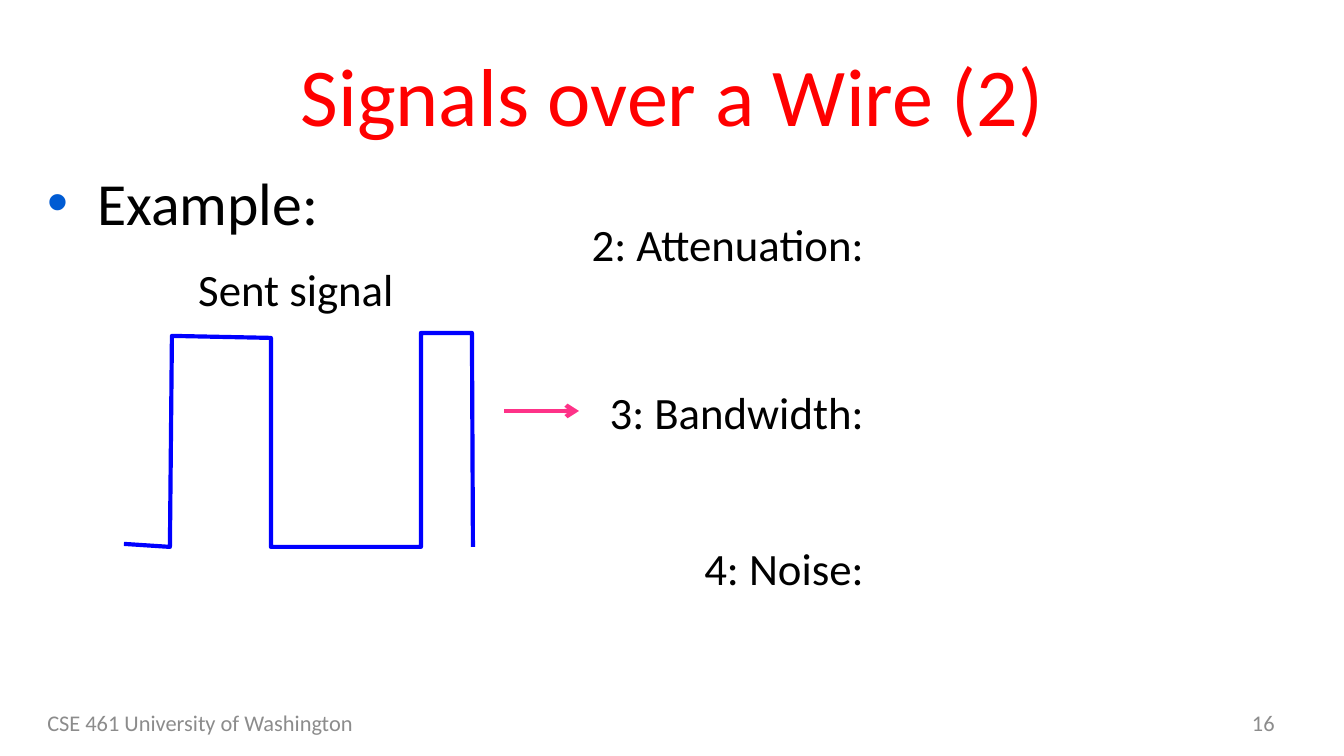
from lxml import etree
from pptx import Presentation
from pptx import util as u
from pptx.dml.color import RGBColor
from pptx.enum import shapes, text
from pptx.oxml import parse_xml
from pptx.oxml.ns import nsdecls, qn

SCALE = 914400 / 134.4
FONT = "Calibri"
RED = RGBColor(0xFF, 0x00, 0x00)
BLACK = RGBColor(0x00, 0x00, 0x00)
GRAY = RGBColor(0x8C, 0x8C, 0x8C)
BLUE = RGBColor(0x00, 0x00, 0xFF)
PINK = RGBColor(0xFE, 0x32, 0x88)
BULLET_BLUE = RGBColor(0x00, 0x5B, 0xD3)

LEFT, CENTER, RIGHT = text.PP_ALIGN.LEFT, text.PP_ALIGN.CENTER, text.PP_ALIGN.RIGHT
TOP, MIDDLE = text.MSO_ANCHOR.TOP, text.MSO_ANCHOR.MIDDLE

TITLE = "Signals over a Wire (2)"
TITLE_BOX = (34, 31, 1277, 126)
BULLET = "Example:"
BULLET_BOX = (34, 159, 1277, 499)
BULLET_INDENT = 50
EFFECTS = [("2: Attenuation:", 210), ("3: Bandwidth:", 378), ("4: Noise:", 534)]
EFFECT_LEFT, EFFECT_WIDTH, LABEL_HEIGHT = 565, 312, 67
SENT_LABEL = ("Sent signal", (185, 255, 230, LABEL_HEIGHT))
FOOTERS = [
    ("CSE 461 University of Washington", (34, 703, 426, 40), LEFT),
    ("16", (974, 703, 314, 40), RIGHT),
]
SIGNAL = [(124, 544), (170, 547), (172, 336), (271, 338), (271, 547),
          (421, 547), (421, 333), (472, 333), (473, 547)]
ARROW = (504, 411, 579, 411)


def px(*values):
    return [u.Emu(round(value * SCALE)) for value in values]


def write(shape, words, size, color, align=LEFT, anchor=TOP):
    frame = shape.text_frame
    frame.word_wrap = True
    frame.auto_size = text.MSO_AUTO_SIZE.NONE
    frame.vertical_anchor = anchor
    paragraph = frame.paragraphs[0]
    paragraph.text = words
    paragraph.alignment = align
    paragraph.font.name = FONT
    paragraph.font.size = u.Pt(size)
    paragraph.font.color.rgb = color
    return paragraph


def add_text(slide, words, box, *style):
    return write(slide.shapes.add_textbox(*px(*box)), words, *style)


def add_bullet(paragraph):
    properties = paragraph._p.get_or_add_pPr()
    indent = px(BULLET_INDENT)[0]
    properties.set("marL", str(indent))
    properties.set("indent", str(-indent))
    parts = [
        '<a:spcBef {}><a:spcPct val="20000"/></a:spcBef>',
        '<a:buClr {}><a:srgbClr val="' + str(BULLET_BLUE) + '"/></a:buClr>',
        '<a:buFont {} typeface="Arial"/>',
        '<a:buChar {} char="•"/>',
    ]
    for position, part in enumerate(parts):
        properties.insert(position, parse_xml(part.format(nsdecls("a"))))


def add_signal(slide):
    points = [px(*point) for point in SIGNAL]
    builder = slide.shapes.build_freeform(*points[0])
    builder.add_line_segments(points[1:], close=False)
    signal = builder.convert_to_shape()
    signal.shadow.inherit = False
    signal.fill.background()
    signal.line.color.rgb = BLUE
    signal.line.width = u.Pt(2.25)


def add_arrow(slide):
    arrow = slide.shapes.add_connector(shapes.MSO_CONNECTOR.STRAIGHT, *px(*ARROW))
    arrow.line.color.rgb = PINK
    arrow.line.width = u.Pt(2.25)
    properties = arrow._element.spPr
    etree.SubElement(properties.find(qn("a:ln")), qn("a:tailEnd"), type="arrow")
    etree.SubElement(properties, qn("a:effectLst"))


def main():
    presentation = Presentation()
    presentation.slide_width, presentation.slide_height = px(1344, 756)
    slide = presentation.slides.add_slide(presentation.slide_layouts[5])

    title = slide.shapes.title
    title.left, title.top, title.width, title.height = px(*TITLE_BOX)
    write(title, TITLE, 44, RED, CENTER, MIDDLE)

    add_bullet(add_text(slide, BULLET, BULLET_BOX, 32, BLACK))
    for words, box, align in FOOTERS:
        add_text(slide, words, box, 12, GRAY, align, MIDDLE)
    add_signal(slide)
    for words, top in EFFECTS:
        box = (EFFECT_LEFT, top, EFFECT_WIDTH, LABEL_HEIGHT)
        add_text(slide, words, box, 24, BLACK, RIGHT)
    add_text(slide, *SENT_LABEL, 24, BLACK)
    add_arrow(slide)

    presentation.save("out.pptx")


if __name__ == "__main__":
    main()
